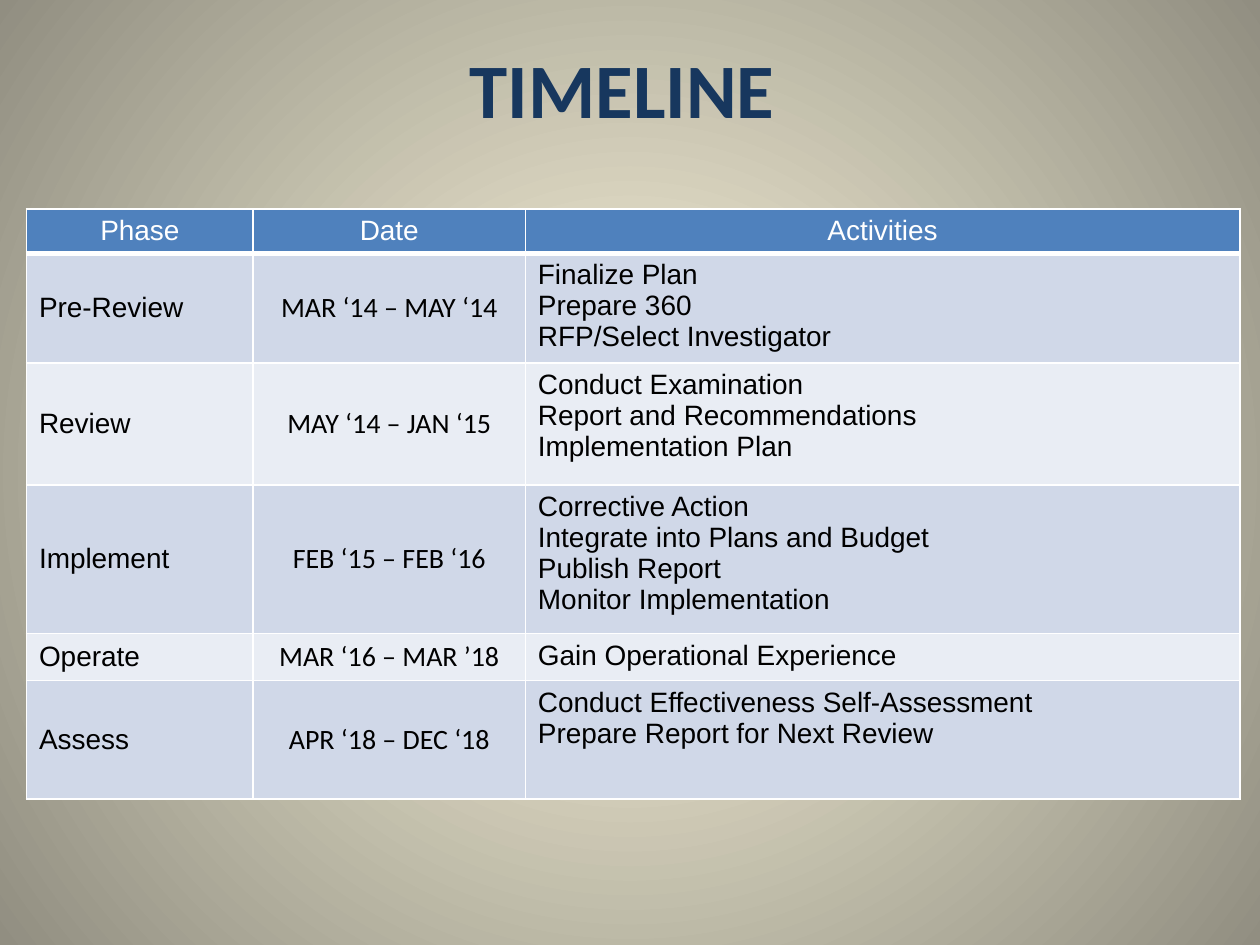
"""Build a one-page review timeline: a title above a table of phases."""
from lxml import etree
from pptx import Presentation
from pptx import util as u
from pptx.dml.color import RGBColor
from pptx.enum import text
from pptx.oxml import ns

NAVY = RGBColor(0x17, 0x37, 0x5E)
BLUE = RGBColor(0x4F, 0x81, 0xBD)
BANDS = [RGBColor(0xD0, 0xD8, 0xE8), RGBColor(0xE9, 0xED, 0xF4)]
WHITE = RGBColor(0xFF, 0xFF, 0xFF)
BLACK = RGBColor(0, 0, 0)
GLOW = [RGBColor(0xFC, 0xF7, 0xDD), RGBColor(0x91, 0x8E, 0x81)]

COLUMNS = [1.8, 2.16, 5.67]
ROWS = [0.35, 0.87, 0.97, 1.18, 0.37, 0.94]
CENTER, LEFT = text.PP_ALIGN.CENTER, text.PP_ALIGN.LEFT
TOP, MIDDLE = text.MSO_ANCHOR.TOP, text.MSO_ANCHOR.MIDDLE
COLUMN_STYLES = [("Arial", LEFT, MIDDLE), ("Calibri", CENTER, MIDDLE), ("Arial", LEFT, TOP)]
PHASES = [
    ("Phase", "Date", "Activities"),
    ("Pre-Review", "MAR ‘14 – MAY ‘14", "Finalize Plan\nPrepare 360\nRFP/Select Investigator"),
    ("Review", "MAY ‘14 – JAN ‘15",
     "Conduct Examination\nReport and Recommendations\nImplementation Plan"),
    ("Implement", "FEB ‘15 – FEB ‘16",
     "Corrective Action\nIntegrate into Plans and Budget\nPublish Report\nMonitor Implementation"),
    ("Operate", "MAR ‘16 – MAR ’18", "Gain Operational Experience"),
    ("Assess", "APR ‘18 – DEC ‘18",
     "Conduct Effectiveness Self-Assessment\nPrepare Report for Next Review"),
]


def write(frame, words, align, color, **font):
    frame.text = words
    for para in frame.paragraphs:
        para.alignment = align
        for span in para.runs:
            span.font.color.rgb = color
            for name, value in font.items():
                setattr(span.font, name, value)


def add_border(cell, side, points):
    line = etree.Element(ns.qn(f"a:ln{side}"), w=str(u.Pt(points)))
    fill = etree.SubElement(line, ns.qn("a:solidFill"))
    etree.SubElement(fill, ns.qn("a:srgbClr"), val=str(WHITE))
    cell._tc.get_or_add_tcPr().insert("LRTB".index(side), line)


deck = Presentation()
deck.slide_width, deck.slide_height = u.Inches(10), u.Inches(7.5)
page = deck.slides.add_slide(deck.slide_layouts[6])

backdrop = page.background.fill
backdrop.gradient()
for stop, color, position in zip(backdrop.gradient_stops, GLOW, (0, 1)):
    stop.color.rgb = color
    stop.position = position
gradient = page.element.find(".//" + ns.qn("a:gradFill"))
gradient.remove(gradient.find(ns.qn("a:lin")))
circle = etree.SubElement(gradient, ns.qn("a:path"), path="circle")
etree.SubElement(circle, ns.qn("a:fillToRect"), dict.fromkeys("ltrb", "50000"))

table = page.shapes.add_table(
    len(ROWS), len(COLUMNS), u.Inches(0.21), u.Inches(1.66),
    u.Inches(sum(COLUMNS)), u.Inches(sum(ROWS))).table
for column, width in zip(table.columns, COLUMNS):
    column.width = u.Inches(width)
for r, (height, phase) in enumerate(zip(ROWS, PHASES)):
    table.rows[r].height = u.Inches(height)
    for c, (words, (font, align, anchor)) in enumerate(zip(phase, COLUMN_STYLES)):
        cell = table.cell(r, c)
        color, fill = BLACK, BANDS[(r - 1) % 2]
        if r == 0:
            font, align, anchor, color, fill = "Arial", CENTER, TOP, WHITE, BLUE
        write(cell.text_frame, words, align, color, name=font, size=u.Pt(16), bold=False)
        cell.vertical_anchor = anchor
        cell.fill.solid()
        cell.fill.fore_color.rgb = fill
        for side in "LRTB":
            header_edge = (r, side) in ((0, "B"), (1, "T"))
            add_border(cell, side, 3 if header_edge else 1)

box = page.shapes.add_textbox(u.Inches(0.33), u.Inches(0.13), u.Inches(9.22), u.Inches(0.98))
for name, value in {"word_wrap": True, "vertical_anchor": text.MSO_ANCHOR.BOTTOM}.items():
    setattr(box.text_frame, name, value)
write(box.text_frame, "TIMELINE", CENTER, NAVY, name="Calibri", size=u.Pt(44), bold=True)

deck.save("out.pptx")
